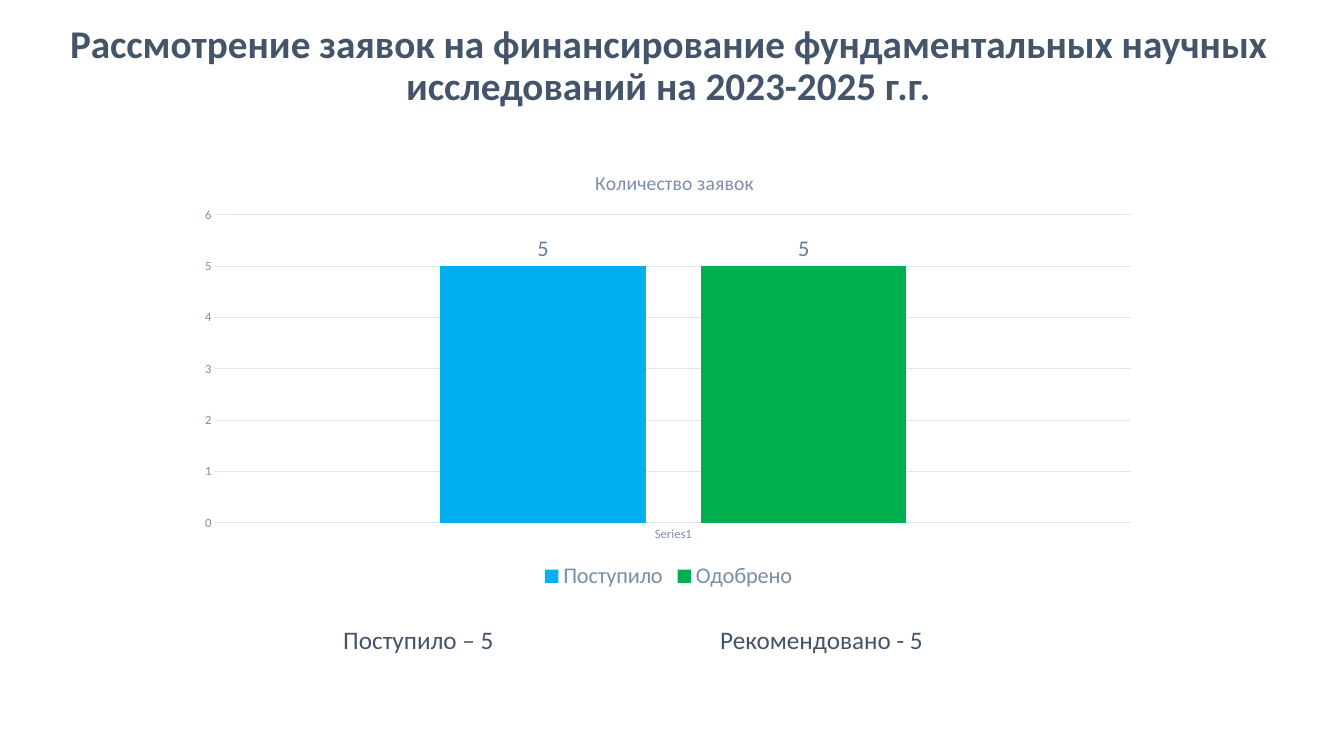
from lxml import etree
from pptx import Presentation
from pptx.chart.data import CategoryChartData
from pptx.dml.color import RGBColor
from pptx.enum.chart import XL_CHART_TYPE, XL_LABEL_POSITION, XL_LEGEND_POSITION, XL_TICK_MARK
from pptx.enum.shapes import MSO_SHAPE
from pptx.enum.text import MSO_ANCHOR, PP_ALIGN
from pptx.oxml.ns import qn
from pptx.util import Cm, Pt

COLUMNS = XL_CHART_TYPE.COLUMN_CLUSTERED
LABEL_ABOVE = XL_LABEL_POSITION.OUTSIDE_END
LEGEND_BELOW = XL_LEGEND_POSITION.BOTTOM
NO_TICKS = XL_TICK_MARK.NONE
RECTANGLE = MSO_SHAPE.RECTANGLE
TOP, MIDDLE = MSO_ANCHOR.TOP, MSO_ANCHOR.MIDDLE
LEFT, CENTER = PP_ALIGN.LEFT, PP_ALIGN.CENTER

FONT = "Calibri"
COLORS = {
    "text": "445469",
    "muted": "7A8EA9",
    "label": "667D9C",
    "grid": "E0E5EB",
    "white": "FFFFFF",
    "received": "00B0F0",
    "approved": "00B050",
}
APPLICATIONS = [("Поступило", 5, "received"), ("Одобрено", 5, "approved")]


def color(name):
    return RGBColor.from_string(COLORS[name])


def style_font(font, size, color_name, bold=False):
    font.name = FONT
    font.size = Pt(size)
    font.bold = bold
    font.color.rgb = color(color_name)


def style_line(line, color_name, width):
    line.color.rgb = color(color_name)
    line.width = Pt(width)


def set_layout(element, index, **values):
    layout = element.find(qn("c:layout"))
    if layout is None:
        layout = etree.Element(qn("c:layout"))
        element.insert(index, layout)
    manual = etree.SubElement(layout, qn("c:manualLayout"))
    for tag, value in values.items():
        etree.SubElement(manual, qn(f"c:{tag}")).set("val", str(value))


def add_heading(slide, left, top, width, height):
    shape = slide.shapes.add_textbox(left, top, width, height)
    text_frame = shape.text_frame
    text_frame.word_wrap = True
    text_frame.vertical_anchor = TOP
    text_frame.text = (
        "Рассмотрение заявок на финансирование фундаментальных "
        "научных исследований на 2023-2025 г.г."
    )
    paragraph = text_frame.paragraphs[0]
    paragraph.alignment = CENTER
    paragraph.line_spacing = 0.9
    style_font(paragraph.runs[0].font, 28, "text", bold=True)


def add_summary(slide, left, top, width, height):
    shape = slide.shapes.add_shape(RECTANGLE, left, top, width, height)
    shape.shadow.inherit = False
    shape.fill.background()
    style_line(shape.line, "white", 1)
    text_frame = shape.text_frame
    text_frame.word_wrap = True
    text_frame.vertical_anchor = MIDDLE
    text_frame.margin_left = Cm(4.45)
    text_frame.text = "Поступило – 5\tРекомендовано - 5"
    paragraph = text_frame.paragraphs[0]
    paragraph.alignment = LEFT
    tab_stops = etree.SubElement(paragraph._p.get_or_add_pPr(), qn("a:tabLst"))
    etree.SubElement(tab_stops, qn("a:tab"), pos=str(Cm(9.5)), algn="l")
    for run in paragraph.runs:
        style_font(run.font, 18, "text")


def add_applications_chart(slide, left, top, width, height):
    chart_data = CategoryChartData()
    chart_data.categories = ["Series1"]
    for name, value, _ in APPLICATIONS:
        chart_data.add_series(name, [value])
    chart = slide.shapes.add_chart(COLUMNS, left, top, width, height, chart_data).chart
    style_font(chart.font, 10, "text")

    chart.has_title = True
    title = chart.chart_title
    title.text_frame.text = "Количество заявок"
    style_font(title.text_frame.paragraphs[0].runs[0].font, 14, "muted")
    set_layout(title._element, 1, xMode="edge", yMode="edge", x=0.42, y=0.04)

    chart.has_legend = True
    chart.legend.position = LEGEND_BELOW
    chart.legend.include_in_layout = False
    style_font(chart.legend.font, 16, "muted")

    for axis in (chart.category_axis, chart.value_axis):
        axis.major_tick_mark = NO_TICKS
        axis.minor_tick_mark = NO_TICKS
        style_font(axis.tick_labels.font, 9, "muted")
    style_line(chart.category_axis.format.line, "grid", 0.75)
    value_axis = chart.value_axis
    value_axis.minimum_scale, value_axis.maximum_scale = 0, 6
    value_axis.major_unit = 1
    value_axis.format.line.fill.background()
    style_line(value_axis.major_gridlines.format.line, "grid", 0.75)

    plot = chart.plots[0]
    plot.vary_by_categories = False
    plot.gap_width = 219
    plot.overlap = -27
    for series, (_, _, color_name) in zip(plot.series, APPLICATIONS):
        series.format.fill.solid()
        series.format.fill.fore_color.rgb = color(color_name)
        labels = series.data_labels
        labels.show_value = True
        labels.position = LABEL_ABOVE
        style_font(labels.font, 16, "label")

    plot_area = chart._chartSpace.find(f".//{qn('c:plotArea')}")
    set_layout(plot_area, 0, layoutTarget="inner", xMode="edge", yMode="edge",
               x=0.03, y=0.15, w=0.95, h=0.69)


def main():
    presentation = Presentation()
    presentation.slide_width = Cm(33.87)
    presentation.slide_height = Cm(19.05)
    slide = presentation.slides.add_slide(presentation.slide_layouts[6])
    add_heading(slide, Cm(0.28), Cm(0.5), Cm(33.12), Cm(1.9))
    add_summary(slide, Cm(4.2), Cm(15.6), Cm(23.52), Cm(1.04))
    add_applications_chart(slide, Cm(4.7), Cm(3.73), Cm(24.3), Cm(11.25))
    presentation.save("out.pptx")


if __name__ == "__main__":
    main()
